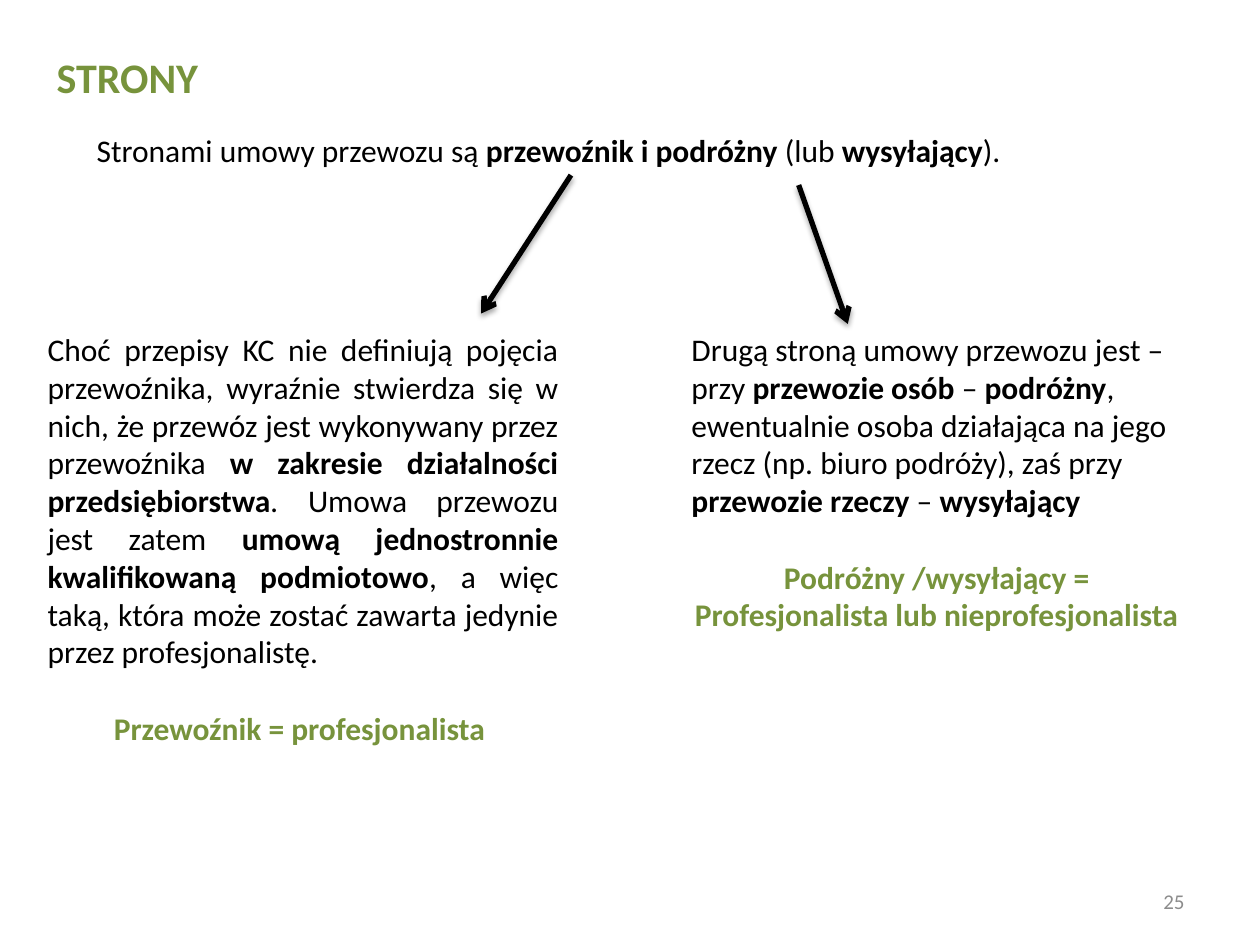
"""Builds the slide on the parties to a contract of carriage."""
from lxml import etree
from pptx import Presentation
from pptx.dml.color import RGBColor
from pptx.enum.shapes import MSO_CONNECTOR
from pptx.enum.text import MSO_ANCHOR, MSO_AUTO_SIZE, PP_ALIGN
from pptx.oxml import parse_xml
from pptx.oxml.ns import nsdecls, qn
from pptx.util import Cm, Pt

LEFT, CENTER, RIGHT, JUSTIFY = PP_ALIGN.LEFT, PP_ALIGN.CENTER, PP_ALIGN.RIGHT, PP_ALIGN.JUSTIFY
TOP, MIDDLE = MSO_ANCHOR.TOP, MSO_ANCHOR.MIDDLE
GROW, STRAIGHT = MSO_AUTO_SIZE.SHAPE_TO_FIT_TEXT, MSO_CONNECTOR.STRAIGHT
COLORS = {"text": "000000", "accent": "77933C", "number": "8C8C8C"}
FONT = "Calibri"
SHADOW = (
    f'<a:effectLst {nsdecls("a")}><a:outerShdw blurRad="40000" dist="23000" dir="5400000" '
    f'rotWithShape="0"><a:srgbClr val="{COLORS["text"]}"><a:alpha val="35000"/></a:srgbClr>'
    '</a:outerShdw></a:effectLst>'
)


def add_runs(p, runs, size=18, color="text", align=LEFT):
    p.alignment = align
    for text, style in runs:
        r = p.add_run()
        r.text = text
        r.font.name = FONT
        r.font.size = Pt(size)
        r.font.bold = "b" in style
        r.font.italic = "i" in style
        r.font.color.rgb = RGBColor.from_string(COLORS[color])


def add_text(s, left, top, width, height):
    tf = s.shapes.add_textbox(Cm(left), Cm(top), Cm(width), Cm(height)).text_frame
    tf.word_wrap = True
    tf.auto_size = GROW
    return tf


prs = Presentation()
prs.slide_width, prs.slide_height = Cm(25.4), Cm(19.05)
s = prs.slides.add_slide(prs.slide_layouts[5])

title = s.shapes.title
title.left, title.top, title.width, title.height = Cm(0.89), Cm(0.91), Cm(3.38), Cm(1.27)
tf = title.text_frame
tf.word_wrap = False
tf.auto_size = GROW
tf.vertical_anchor = TOP
add_runs(tf.paragraphs[0], [("STRONY", "b")], 24, "accent")

tf = add_text(s, 1.7, 2.51, 22.61, 1.8)
add_runs(tf.paragraphs[0], [
    ("Stronami umowy przewozu są ", ""),
    ("przewoźnik i podróżny", "b"),
    (" (lub ", ""),
    ("wysyłający", "b"),
    (").", ""),
])

carrier = [
    ("Choć przepisy KC nie definiują pojęcia przewoźnika, wyraźnie stwierdza się w nich, "
     "że przewóz jest wykonywany przez przewoźnika ", ""),
    ("w zakresie działalności przedsiębiorstwa", "b"),
    (".", "i"),
    (" Umowa przewozu jest zatem ", ""),
    ("umową jednostronnie kwalifikowaną podmiotowo", "b"),
    (", a więc taką, która może zostać zawarta jedynie przez profesjonalistę.", ""),
]
passenger = [
    ("Drugą stroną umowy przewozu jest – przy ", ""),
    ("przewozie osób", "b"),
    (" – ", ""),
    ("podróżny", "b"),
    (", ewentualnie osoba działająca na jego rzecz (np. biuro podróży), zaś przy ", ""),
    ("przewozie rzeczy", "b"),
    (" – ", ""),
    ("wysyłający", "b"),
]
columns = [
    (0.71, 10.8, 8.71, JUSTIFY, carrier, "Przewoźnik = profesjonalista "),
    (13.69, 10.39, 6.4, LEFT, passenger,
     "Podróżny /wysyłający = Profesjonalista lub nieprofesjonalista"),
]
for left, width, height, align, runs, summary in columns:
    tf = add_text(s, left, 6.53, width, height)
    add_runs(tf.paragraphs[0], runs, align=align)
    p = tf.add_paragraph()
    p.space_before = Pt(22)
    add_runs(p, [(summary, "b")], color="accent", align=CENTER)

for x1, y1, x2, y2 in [(11.51, 3.53, 9.7, 6.32), (16.1, 3.73, 17.09, 6.53)]:
    arrow = s.shapes.add_connector(STRAIGHT, Cm(x1), Cm(y1), Cm(x2), Cm(y2))
    arrow.line.width = Pt(3)
    arrow.line.color.rgb = RGBColor.from_string(COLORS["text"])
    etree.SubElement(arrow.line._get_or_add_ln(), qn("a:tailEnd"), type="arrow")
    arrow._element.spPr.append(parse_xml(SHADOW))

tf = add_text(s, 18.2, 17.66, 5.93, 1.01)
tf.auto_size = MSO_AUTO_SIZE.NONE
tf.vertical_anchor = MIDDLE
add_runs(tf.paragraphs[0], [("25", "")], 12, "number", RIGHT)

prs.save("out.pptx")
